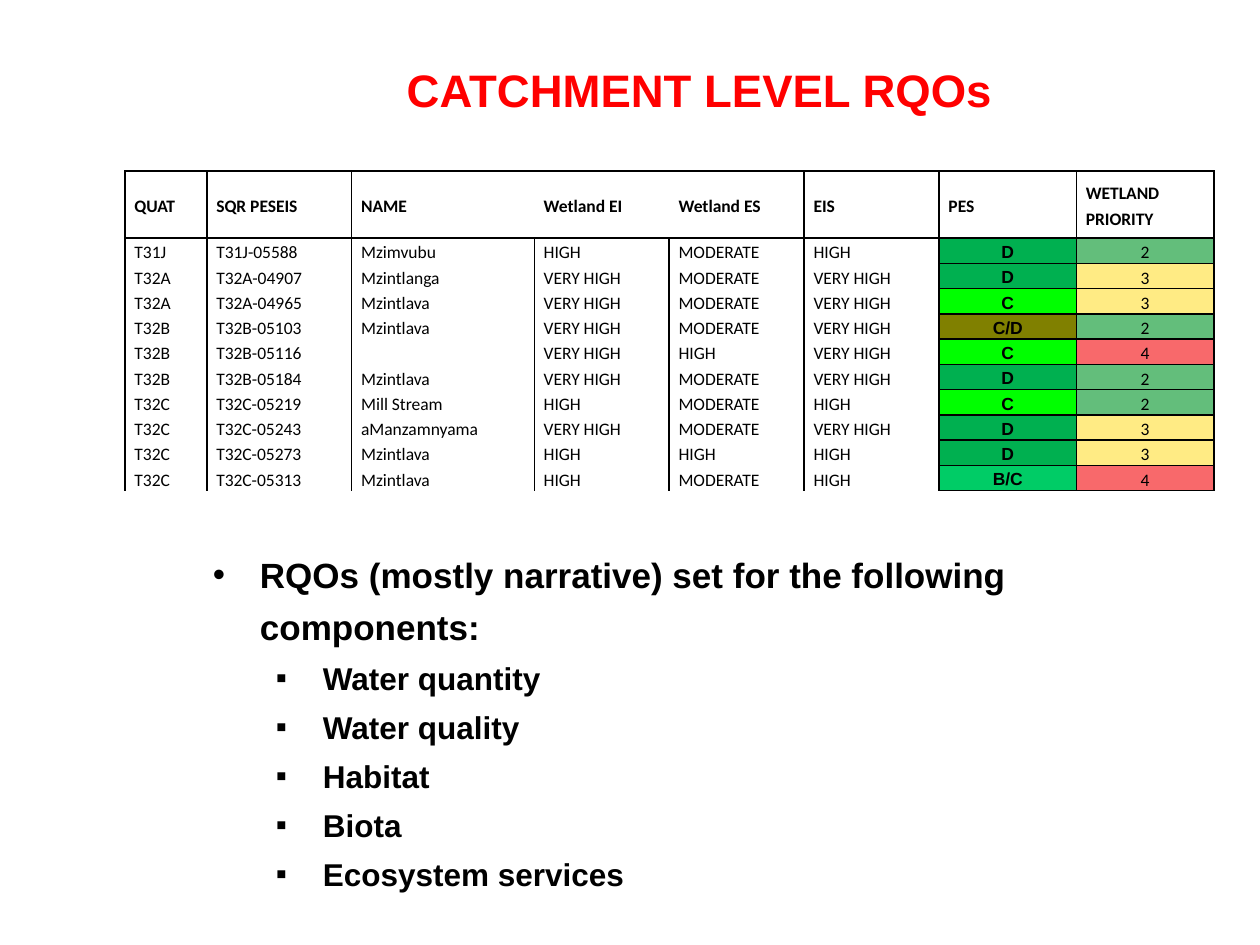
from lxml.etree import SubElement
from pptx import Presentation
from pptx.dml.color import RGBColor
from pptx.enum.text import MSO_ANCHOR as ANCHOR, PP_ALIGN as ALIGN
from pptx.oxml.ns import qn
from pptx.util import Cm, Pt

NO_GRID = "{2D5ABB26-0587-4C30-8999-92F81FD0307C}"
PES_COLOURS = {"D": "00B050", "C": "00FF00", "C/D": "808000", "B/C": "00CC66"}
PRIORITY_COLOURS = {"2": "63BE7B", "3": "FFEB84", "4": "F8696B"}
PES, PRIORITY = 6, 7
COL_WIDTHS = [1.65, 2.92, 3.68, 2.72, 2.72, 2.72, 2.77, 2.77]
HEADER = ["QUAT", "SQR PESEIS", "NAME", "Wetland EI", "Wetland ES", "EIS", "PES",
          "WETLAND PRIORITY"]
HEADER_BORDERS = ["LRTB", "LRTB", "LTB", "TB", "RTB", "LRTB", "LRTB", "LRTB"]
WETLANDS = [
    ["T31J", "T31J-05588", "Mzimvubu", "HIGH", "MODERATE", "HIGH", "D", "2"],
    ["T32A", "T32A-04907", "Mzintlanga", "VERY HIGH", "MODERATE", "VERY HIGH", "D", "3"],
    ["T32A", "T32A-04965", "Mzintlava", "VERY HIGH", "MODERATE", "VERY HIGH", "C", "3"],
    ["T32B", "T32B-05103", "Mzintlava", "VERY HIGH", "MODERATE", "VERY HIGH", "C/D", "2"],
    ["T32B", "T32B-05116", "", "VERY HIGH", "HIGH", "VERY HIGH", "C", "4"],
    ["T32B", "T32B-05184", "Mzintlava", "VERY HIGH", "MODERATE", "VERY HIGH", "D", "2"],
    ["T32C", "T32C-05219", "Mill Stream", "HIGH", "MODERATE", "HIGH", "C", "2"],
    ["T32C", "T32C-05243", "aManzamnyama", "VERY HIGH", "MODERATE", "VERY HIGH", "D", "3"],
    ["T32C", "T32C-05273", "Mzintlava", "HIGH", "HIGH", "HIGH", "D", "3"],
    ["T32C", "T32C-05313", "Mzintlava", "HIGH", "MODERATE", "HIGH", "B/C", "4"],
]
COMPONENTS = ["Water quantity", "Water quality", "Habitat", "Biota", "Ecosystem services"]


def rgb(value):
    return RGBColor.from_string(value)


class Deck:
    heading_font, table_font = "Arial", "Calibri"
    ink, accent = "000000", "FF0000"

    def __init__(self):
        self.prs = Presentation()
        self.prs.slide_width, self.prs.slide_height = Cm(25.4), Cm(19.05)
        self.s = self.prs.slides.add_slide(self.prs.slide_layouts[6])

    def run(self, p, text, size, font=heading_font, colour=ink, bold=True):
        r = p.add_run()
        r.text = text
        r.font.size, r.font.name, r.font.bold = Pt(size), font, bold
        r.font.color.rgb = rgb(colour)

    def box(self, x, y, w, h, wrap=True):
        tf = self.s.shapes.add_textbox(Cm(x), Cm(y), Cm(w), Cm(h)).text_frame
        tf.word_wrap = wrap
        return tf

    def title(self, text):
        tf = self.box(7.95, 1.12, 12.42, 1.37, wrap=False)
        self.run(tf.paragraphs[0], text, 26, colour=self.accent)

    def bullet(self, p, text, char, level, size, indent):
        p.level, p.line_spacing = level, 1.25
        if level:
            p.space_before = Pt(1)
        pPr = p._p.get_or_add_pPr()
        pPr.set("marL", str(Cm(indent)))
        pPr.set("indent", str(-Cm(0.95)))
        SubElement(pPr, qn("a:buFont"), typeface=self.heading_font)
        SubElement(pPr, qn("a:buChar"), char=char)
        self.run(p, text, size)

    def bullets(self, lead, items):
        tf = self.box(4.04, 10.82, 21.11, 6)
        self.bullet(tf.paragraphs[0], lead, "•", 0, 20, 0.95)
        for item in items:
            self.bullet(tf.add_paragraph(), item, "▪", 1, 18, 2.22)

    def borders(self, cell, sides):
        """Draw the sides named by the letters L, R, T and B; clear the others."""
        tcPr = cell._tc.get_or_add_tcPr()
        for side in "LRTB":
            ln = SubElement(tcPr, qn(f"a:ln{side}"), w=str(Pt(1)))
            if side in sides:
                fill = SubElement(ln, qn("a:solidFill"))
                SubElement(fill, qn("a:srgbClr"), val=self.ink)
            else:
                SubElement(ln, qn("a:noFill"))

    def cell(self, cell, text, sides, bold=False, font=table_font, fill=None,
             anchor=ANCHOR.BOTTOM):
        cell.margin_left = cell.margin_right = Cm(0.19)
        cell.margin_top = cell.margin_bottom = 0
        cell.vertical_anchor = anchor
        self.borders(cell, sides)
        p = cell.text_frame.paragraphs[0]
        p.line_spacing = 1.2
        if fill:
            cell.fill.solid()
            cell.fill.fore_color.rgb = rgb(fill)
            p.alignment = ALIGN.CENTER
        else:
            cell.fill.background()
        if text:
            self.run(p, text, 10, font, bold=bold)
        else:
            SubElement(p._p, qn("a:endParaRPr"), sz="1000")

    def table(self, header, rows):
        frame = self.s.shapes.add_table(len(rows) + 1, len(header), Cm(2.52), Cm(3.45),
                                        Cm(sum(COL_WIDTHS)), Cm(1.35 + 0.46 * len(rows)))
        tbl = frame.table
        tbl.first_row = tbl.horz_banding = False
        tbl._tbl.tblPr.find(qn("a:tableStyleId")).text = NO_GRID
        for col, width in zip(tbl.columns, COL_WIDTHS):
            col.width = Cm(width)
        for i, row in enumerate(tbl.rows):
            row.height = Cm(0.46 if i else 1.35)
        for c, text in enumerate(header):
            self.cell(tbl.cell(0, c), text, HEADER_BORDERS[c], True, anchor=ANCHOR.MIDDLE)
        for i, values in enumerate(rows, 1):
            for c, text in enumerate(values):
                target = tbl.cell(i, c)
                if c == PES:
                    self.cell(target, text, "LRTB", True, self.heading_font,
                              PES_COLOURS[text], ANCHOR.MIDDLE)
                elif c == PRIORITY:
                    self.cell(target, text, "LRTB", fill=PRIORITY_COLOURS[text])
                else:
                    self.cell(target, text, "LRT" if i == 1 else "LR")


def main():
    deck = Deck()
    deck.title("CATCHMENT LEVEL RQOs")
    deck.table(HEADER, WETLANDS)
    deck.bullets("RQOs (mostly narrative) set for the following components:", COMPONENTS)
    deck.prs.save("out.pptx")


if __name__ == "__main__":
    main()
